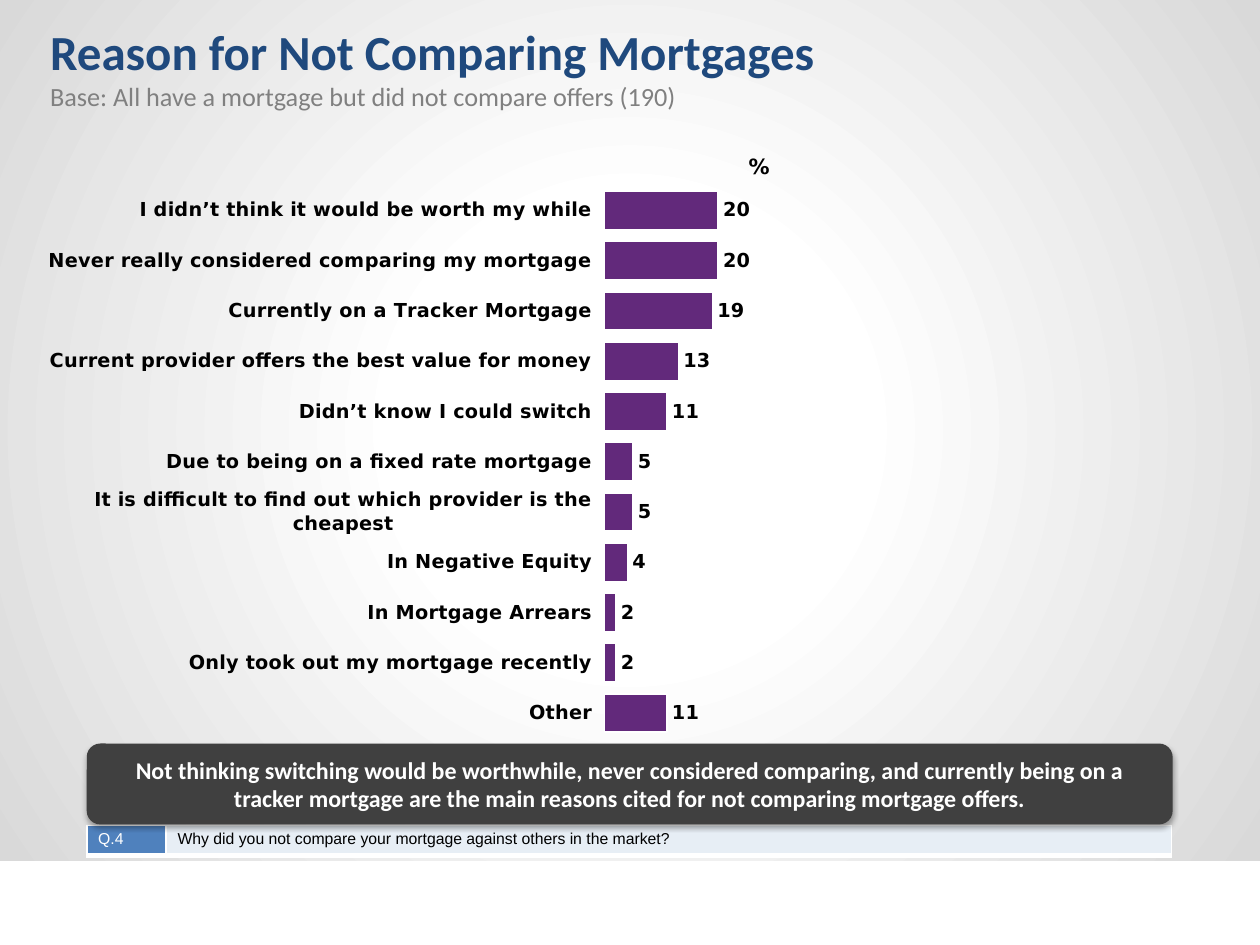
from lxml import etree
from pptx import Presentation
from pptx import util as u
from pptx.chart.data import CategoryChartData
from pptx.dml.color import RGBColor
from pptx.enum import chart as ch, shapes, text
from pptx.oxml import parse_xml
from pptx.oxml.ns import nsdecls, qn

REASONS = [
    ("I didn’t think it would be worth my while", 20),
    ("Never really considered comparing my mortgage", 20),
    ("Currently on a Tracker Mortgage", 19),
    ("Current provider offers the best value for money", 13),
    ("Didn’t know I could switch", 11),
    ("Due to being on a fixed rate mortgage", 5),
    ("It is difficult to find out which provider is the cheapest", 5),
    ("In Negative Equity", 4),
    ("In Mortgage Arrears", 2),
    ("Only took out my mortgage recently", 2),
    ("Other", 11),
]


def rgb(hex_code):
    return RGBColor.from_string(hex_code)


def style_font(font, name, size, color, bold=False):
    font.name, font.size, font.bold = name, u.Pt(size), bold
    font.color.rgb = rgb(color)


def box(left, top, width, height):
    return [u.Cm(v) for v in (left, top, width, height)]


class SlideBuilder:
    heading_font = "Calibri"
    label_font = "DejaVu Sans"
    table_font = "Arial"
    black, white = "000000", "FFFFFF"
    bar, callout_fill = "62297B", "404040"

    def __init__(self, s):
        self.s = s

    def shape(self, kind, *place):
        sp = self.s.shapes.add_shape(kind, *box(*place))
        sp.shadow.inherit = False
        sp.line.fill.background()
        return sp

    def backdrop(self, *place):
        """Rectangle with a circular gradient, light in the middle."""
        sp = self.shape(shapes.MSO_SHAPE.RECTANGLE, *place)
        sp.fill.background()
        no_fill = sp._element.spPr.find(qn("a:noFill"))
        no_fill.getparent().replace(no_fill, parse_xml(
            f'<a:gradFill {nsdecls("a")} rotWithShape="1"><a:gsLst>'
            '<a:gs pos="30000"><a:srgbClr val="FFFFFF"/></a:gs>'
            '<a:gs pos="100000"><a:srgbClr val="D9D9D9"/></a:gs></a:gsLst>'
            '<a:path path="circle">'
            '<a:fillToRect l="50000" t="50000" r="50000" b="50000"/>'
            '</a:path></a:gradFill>'))

    def textbox(self, *place):
        tf = self.s.shapes.add_textbox(*box(*place)).text_frame
        tf.word_wrap = True
        tf.vertical_anchor = text.MSO_ANCHOR.BOTTOM
        return tf

    def title(self, heading, base, *place):
        p = self.textbox(*place).paragraphs[0]
        r = p.add_run()
        r.text = heading
        style_font(r.font, self.heading_font, 28, "1F497D", True)
        p.add_line_break()
        r = p.add_run()
        r.text = base
        style_font(r.font, self.heading_font, 15, "808080")

    def label(self, words, *place):
        p = self.textbox(*place).paragraphs[0]
        p.text = words
        p.alignment = text.PP_ALIGN.CENTER
        style_font(p.font, self.label_font, 12, self.black, True)

    def bar_chart(self, rows, *place):
        data = CategoryChartData(number_format="0")
        data.categories = [name for name, _ in rows]
        data.add_series("Series 1", [value for _, value in rows])
        chart = self.s.shapes.add_chart(
            ch.XL_CHART_TYPE.BAR_CLUSTERED, *box(*place), data).chart
        chart.has_legend = chart.has_title = False
        style_font(chart.font, self.heading_font, 18, self.black)

        axis = chart.category_axis
        axis.reverse_order = True
        axis.major_tick_mark = ch.XL_TICK_MARK.OUTSIDE
        axis.format.line.fill.background()
        style_font(axis.tick_labels.font, self.label_font, 11, self.black, True)

        values = chart.value_axis
        values.minimum_scale, values.maximum_scale = 0, 100
        values.has_major_gridlines = False
        values.visible = False

        plot = chart.plots[0]
        plot.gap_width = 32
        plot.vary_by_categories = False
        series = plot.series[0]
        series.format.fill.solid()
        series.format.fill.fore_color.rgb = rgb(self.bar)
        series.format.line.color.rgb = rgb(self.white)
        series.format.line.width = u.Pt(0.75)
        labels = series.data_labels
        labels.show_value = True
        labels.position = ch.XL_LABEL_POSITION.OUTSIDE_END
        labels.number_format, labels.number_format_is_linked = "0", False
        style_font(labels.font, self.label_font, 11, self.black, True)
        self.place_plot(chart, x=0.5, y=0.03, w=0.5, h=0.94)

    def place_plot(self, chart, **parts):
        """Fix the inner plot area as fractions of the chart."""
        area = chart._chartSpace.chart.plotArea
        for old in area.findall(qn("c:layout")):
            area.remove(old)
        layout = etree.Element(qn("c:layout"))
        manual = etree.SubElement(layout, qn("c:manualLayout"))
        settings = {"layoutTarget": "inner", "xMode": "edge", "yMode": "edge", **parts}
        for tag, value in settings.items():
            etree.SubElement(manual, qn(f"c:{tag}")).set("val", str(value))
        area.insert(0, layout)

    def question(self, cells, widths, left, top, height):
        """One-row table; cells are (words, text colour, fill)."""
        table = self.s.shapes.add_table(
            1, len(cells), *box(left, top, sum(widths), height)).table
        table.first_row = table.horz_banding = False
        table.rows[0].height = u.Cm(height)
        for i, (words, color, fill) in enumerate(cells):
            table.columns[i].width = u.Cm(widths[i])
            cell = table.cell(0, i)
            cell.margin_left = cell.margin_right = u.Cm(0.23)
            cell.margin_top = cell.margin_bottom = u.Cm(0.1)
            cell.fill.solid()
            cell.fill.fore_color.rgb = rgb(fill)
            p = cell.text_frame.paragraphs[0]
            p.text = words
            p.alignment = text.PP_ALIGN.LEFT
            style_font(p.font, self.table_font, 9, color)
            self.borders(cell, L=1, R=1, T=1, B=3)

    def borders(self, cell, **widths):
        for i, (side, width) in enumerate(widths.items()):
            cell._tc.get_or_add_tcPr().insert(i, parse_xml(
                f'<a:ln{side} {nsdecls("a")} w="{u.Pt(width)}"><a:solidFill>'
                f'<a:srgbClr val="{self.white}"/></a:solidFill></a:ln{side}>'))

    def callout(self, words, *place):
        sp = self.shape(shapes.MSO_SHAPE.ROUNDED_RECTANGLE, *place)
        sp.fill.solid()
        sp.fill.fore_color.rgb = rgb(self.callout_fill)
        effects = sp._element.spPr.find(qn("a:effectLst"))
        effects.append(parse_xml(
            f'<a:outerShdw {nsdecls("a")} blurRad="{u.Pt(3.1)}" dist="{u.Pt(1.8)}" '
            'dir="5400000" rotWithShape="0"><a:srgbClr val="000000">'
            '<a:alpha val="35000"/></a:srgbClr></a:outerShdw>'))
        tf = sp.text_frame
        tf.word_wrap = True
        tf.vertical_anchor = text.MSO_ANCHOR.MIDDLE
        p = tf.paragraphs[0]
        p.text = words
        p.alignment = text.PP_ALIGN.CENTER
        style_font(p.font, self.heading_font, 13.7, self.white, True)


def main():
    prs = Presentation()
    prs.slide_width, prs.slide_height = u.Cm(25.4), u.Cm(19.05)
    b = SlideBuilder(prs.slides.add_slide(prs.slide_layouts[6]))
    b.backdrop(0, 0, 25.4, 17.35)
    b.title("Reason for Not Comparing Mortgages",
            "Base: All have a mortgage but did not compare offers (190)",
            0.76, 0.53, 22.86, 1.85)
    b.bar_chart(REASONS, 0.76, 3.38, 22.86, 11.86)
    b.label("%", 14.48, 2.97, 1.65, 0.76)
    b.question([("Q.4", b.white, "4F81BD"),
                ("Why did you not compare your mortgage against others in the market?",
                 b.black, "E7EEF5")],
               [1.6, 20.27], 1.75, 16.64, 0.61)
    b.callout("Not thinking switching would be worthwhile, never considered comparing, "
              "and currently being on a tracker mortgage are the main reasons cited "
              "for not comparing mortgage offers.", 1.75, 14.99, 21.89, 1.63)
    prs.save("out.pptx")


if __name__ == "__main__":
    main()
